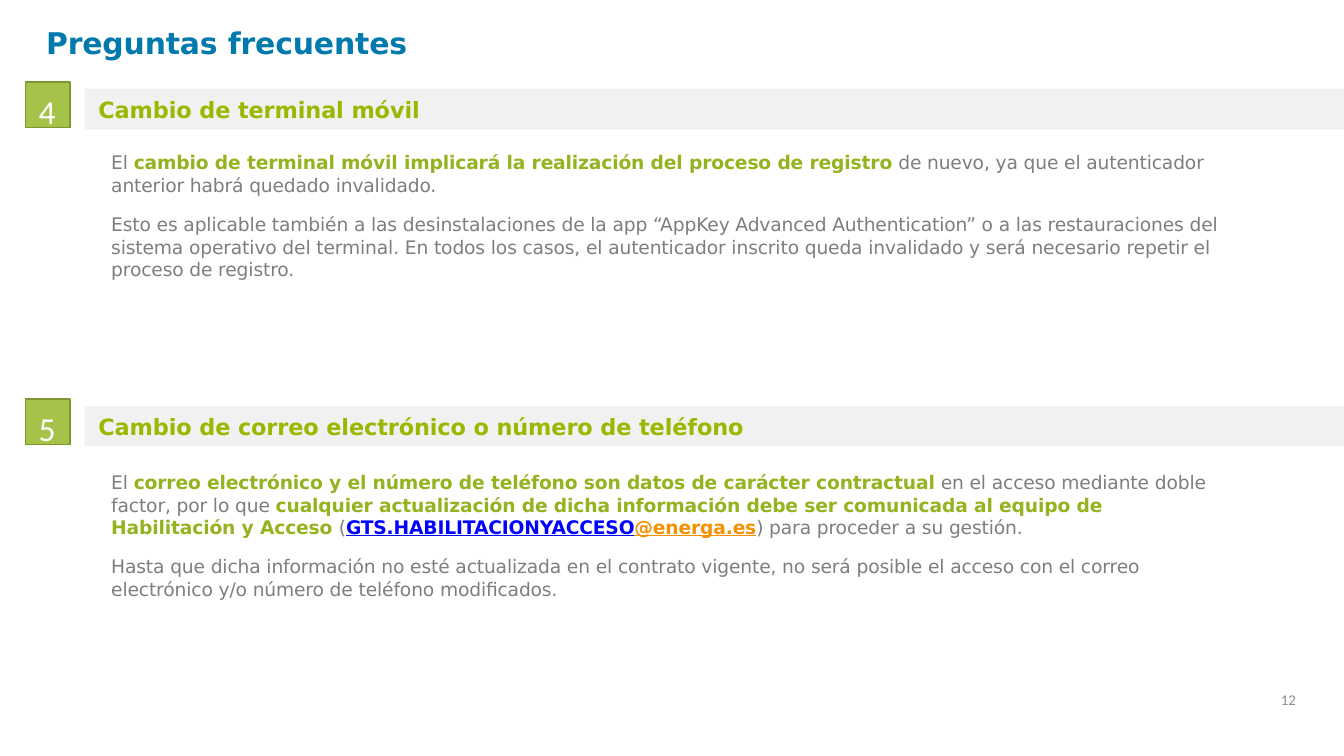
from pptx import Presentation
from pptx.dml.color import RGBColor
from pptx.enum.shapes import MSO_SHAPE as Kind
from pptx.enum.text import MSO_ANCHOR as Anchor
from pptx.util import Pt

WIDTH, HEIGHT = 720, 405
SANS, DIGIT = "DejaVu Sans", "Calibri"
BLUE, LIME, GREEN, GREY = "0079AD", "9CB700", "95B31F", "7E7E7E"
LINK, ORANGE = "0000FF", "F49100"

TITLE = "Preguntas frecuentes"
PAGE = "12"
# Each body is a list of paragraphs; each run is (text, colour), grey is plain
TOPICS = [
    dict(num="4", head="Cambio de terminal móvil", top=47.5, drop=31.7, width=602.6, body=[
        [("El ", GREY),
         ("cambio de terminal móvil implicará la realización del proceso de registro ", GREEN),
         ("de nuevo, ya que el autenticador anterior habrá quedado invalidado.", GREY)],
        [("Esto es aplicable también a las desinstalaciones de la app “AppKey Advanced "
          "Authentication” o a las restauraciones del sistema operativo del terminal. "
          "En todos los casos, el autenticador inscrito queda invalidado y será "
          "necesario repetir el proceso de registro.", GREY)],
    ]),
    dict(num="5", head="Cambio de correo electrónico o número de teléfono",
         top=217.4, drop=33.1, width=590.4, body=[
        [("El ", GREY),
         ("correo electrónico y el número de teléfono son datos de carácter contractual ", GREEN),
         ("en el acceso mediante doble factor, por lo que ", GREY),
         ("cualquier actualización de dicha información debe ser comunicada al equipo de "
          "Habilitación y Acceso ", GREEN),
         ("(", GREY),
         ("GTS.HABILITACIONYACCESO", LINK),
         ("@energa.es", ORANGE),
         (") para proceder a su gestión.", GREY)],
        [("Hasta que dicha información no esté actualizada en el contrato vigente, no será "
          "posible el acceso con el correo electrónico y/o número de teléfono "
          "modificados.", GREY)],
    ]),
]


def color(code):
    return RGBColor.from_string(code)


def add_run(para, text, size, code, font=SANS, bold=False):
    run = para.add_run()
    run.text = text
    run.font.name, run.font.size, run.font.bold = font, Pt(size), bold
    run.font.color.rgb = color(code)
    if font == SANS:
        run.font._element.set("spc", "-5")
    return run


def set_frame(shape, left, top):
    frame = shape.text_frame
    frame.word_wrap = True
    frame.vertical_anchor = Anchor.TOP
    frame.margin_left, frame.margin_top = Pt(left), Pt(top)
    frame.margin_right = frame.margin_bottom = 0
    return frame


def add_text(slide, left, top, width, height):
    box = slide.shapes.add_textbox(Pt(left), Pt(top), Pt(width), Pt(height))
    return set_frame(box, 0.9, 1.8)


def add_rect(slide, left, top, width, height, fill, line=None):
    rect = slide.shapes.add_shape(Kind.RECTANGLE, Pt(left), Pt(top), Pt(width), Pt(height))
    rect.shadow.inherit = False
    rect.fill.solid()
    rect.fill.fore_color.rgb = color(fill)
    if line:
        rect.line.color.rgb = color(line)
        rect.line.width = Pt(0.72)
    else:
        rect.line.fill.background()
    return rect


def add_topic(slide, topic):
    top = topic["top"]
    add_rect(slide, 45.4, top, WIDTH - 45.4, 21.8, "F1F1F1")
    head = add_text(slide, 51.8, top + 2.2, 400, 16.5)
    add_run(head.paragraphs[0], topic["head"], 12, LIME, bold=True)

    badge = add_rect(slide, 13.6, top - 3.6, 23.9, 24.3, "A5C249", "7E9632")
    para = set_frame(badge, 7.2, 4.6).paragraphs[0]
    para.alignment = 1
    add_run(para, topic["num"], 18, "FFFFFF", DIGIT)

    frame = add_text(slide, 58.7, top + topic["drop"], topic["width"], 71.3)
    for i, runs in enumerate(topic["body"]):
        para = frame.add_paragraph() if i else frame.paragraphs[0]
        if i:
            para.space_before = Pt(9)
        for text, code in runs:
            run = add_run(para, text, 10, code, bold=code != GREY)
            run.font.underline = code in (LINK, ORANGE)


def main():
    deck = Presentation()
    deck.slide_width, deck.slide_height = Pt(WIDTH), Pt(HEIGHT)
    slide = deck.slides.add_slide(deck.slide_layouts[6])
    title = add_text(slide, 23.8, 11.5, 300, 20.9)
    add_run(title.paragraphs[0], TITLE, 16, BLUE, bold=True)
    for topic in TOPICS:
        add_topic(slide, topic)
    page = add_text(slide, 685.3, 365, 34.7, 18)
    page.vertical_anchor = Anchor.MIDDLE
    add_run(page.paragraphs[0], PAGE, 8, "8C8C8C", DIGIT)
    deck.save("out.pptx")


if __name__ == "__main__":
    main()
